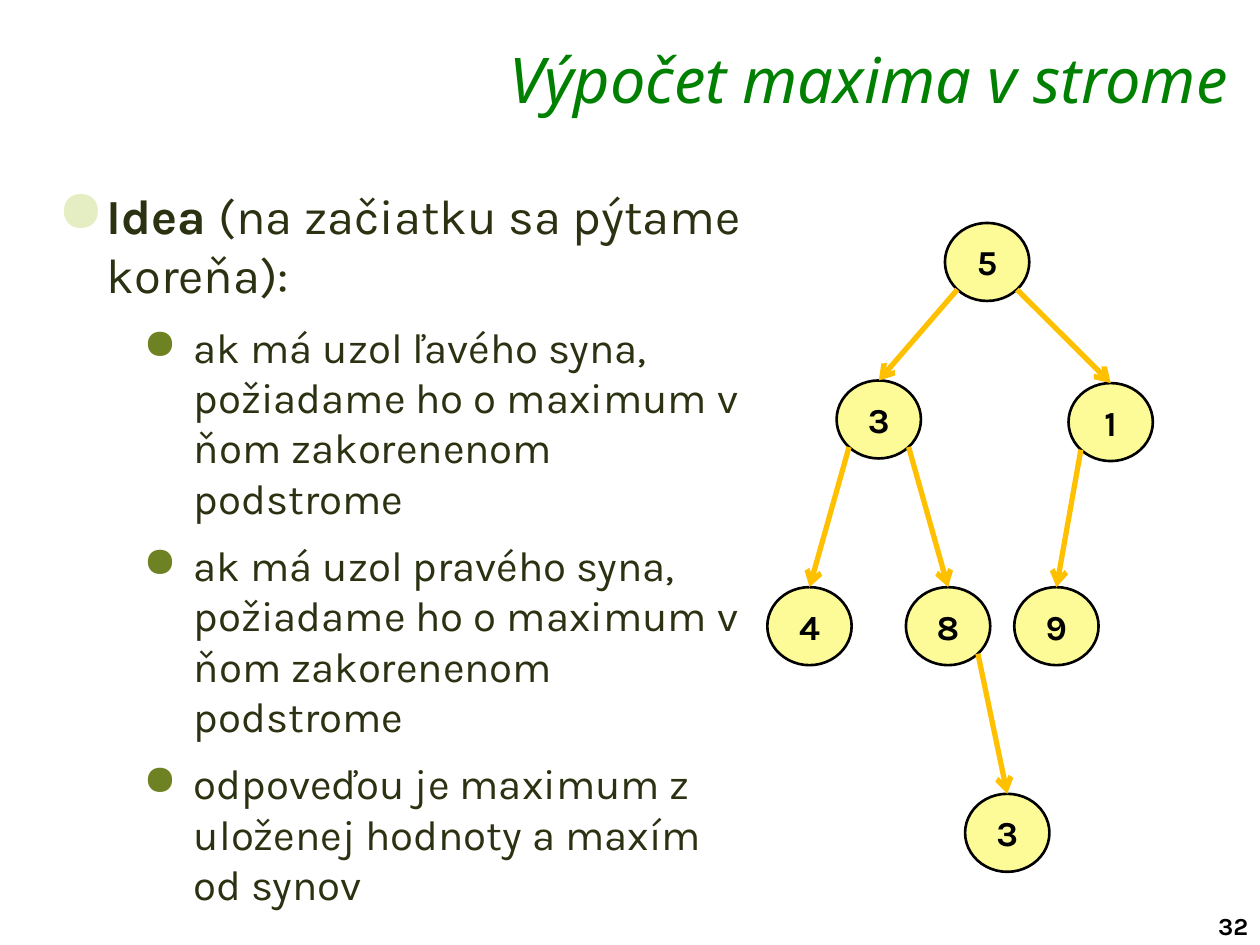
from dataclasses import dataclass

import pptx
from lxml import etree
from pptx import util as u
from pptx.dml.color import RGBColor
from pptx.enum import shapes, text
from pptx.oxml.ns import qn

BODY_FONT = "Karla"
NODE_WIDTH, NODE_HEIGHT = 48.2, 44.6
DIAGONAL = 0.5 ** 0.5  # cosine of 45 degrees


@dataclass(frozen=True)
class Node:
    label: str
    left: float
    top: float


@dataclass(frozen=True)
class Edge:
    child: str
    parent: str
    side: int  # -1 left child, 1 right child


@dataclass(frozen=True)
class Bullet:
    spans: tuple[tuple[str, bool], ...]
    level: int = 1
    size: float = 24
    indent: float = 77.8
    hanging: float = 28.8
    color: str = "6E8224"
    percent: int = 100


NODES = {
    "root": Node("5", 540, 127.4),
    "left": Node("3", 478.1, 217.4),
    "right": Node("1", 610.6, 218.9),
    "left_left": Node("4", 438.5, 335.5),
    "left_right": Node("8", 517.7, 335.5),
    "right_left": Node("9", 579.6, 335.5),
    "deepest": Node("3", 551.5, 453.6),
}
EDGES = (
    Edge("left_left", "left", -1),
    Edge("right_left", "right", -1),
    Edge("deepest", "left_right", 1),
    Edge("left", "root", -1),
    Edge("right", "root", 1),
    Edge("left_right", "left", 1),
)
SUBTREE = "ak má uzol {} syna, požiadame ho o maximum v ňom zakorenenom podstrome"
BULLETS = (
    Bullet((("Idea ", True), ("(na začiatku sa pýtame koreňa):", False)),
           level=0, size=28, indent=28.1, hanging=28.1, color="E5EEC2", percent=120),
    Bullet(((SUBTREE.format("ľavého"), False),)),
    Bullet(((SUBTREE.format("pravého"), False),)),
    Bullet((("odpoveďou je maximum z uloženej hodnoty a maxím od synov", False),)),
)


def apply(target, **values) -> None:
    for name, value in values.items():
        setattr(target, name, value)


def paint(color_format, value: str) -> None:
    color_format.rgb = RGBColor.from_string(value)


def add_span(para, words: str, color: str, **values) -> None:
    span = para.add_run()
    span.text = words
    apply(span.font, **values)
    paint(span.font.color, color)


def add_box(page, left: float, top: float, width: float, height: float, **values):
    box = page.shapes.add_textbox(u.Pt(left), u.Pt(top), u.Pt(width), u.Pt(height))
    apply(box.text_frame, **values)
    return box.text_frame


def add_bullet(para, bullet: Bullet) -> None:
    para.level = bullet.level
    props = para._p.get_or_add_pPr()
    props.set("marL", str(u.Pt(bullet.indent)))
    props.set("indent", str(-u.Pt(bullet.hanging)))
    color = etree.SubElement(props, qn("a:buClr"))
    etree.SubElement(color, qn("a:srgbClr"), val=bullet.color)
    etree.SubElement(props, qn("a:buSzPct"), val=str(bullet.percent * 1000))
    etree.SubElement(props, qn("a:buChar"), char="●")
    for words, bold in bullet.spans:
        add_span(para, words, "2B3212", name=BODY_FONT, size=u.Pt(bullet.size), bold=bold)


def add_node(page, node: Node):
    shape = page.shapes.add_shape(
        shapes.MSO_SHAPE.FLOWCHART_CONNECTOR, u.Pt(node.left), u.Pt(node.top),
        u.Pt(NODE_WIDTH), u.Pt(NODE_HEIGHT))
    shape.shadow.inherit = False
    shape.fill.solid()
    paint(shape.fill.fore_color, "FDFB97")
    paint(shape.line.color, "000000")
    shape.line.width = u.Pt(1.5)
    shape.text_frame.vertical_anchor = text.MSO_ANCHOR.MIDDLE
    para = shape.text_frame.paragraphs[0]
    para.alignment = text.PP_ALIGN.CENTER
    add_span(para, node.label, "000000", name=BODY_FONT, size=u.Pt(20), bold=True)
    return shape


def add_edge(page, edge: Edge, circles: dict) -> None:
    child, parent = NODES[edge.child], NODES[edge.parent]
    end_x = parent.left + NODE_WIDTH / 2 * (1 + edge.side * DIAGONAL)
    end_y = parent.top + NODE_HEIGHT / 2 * (1 + DIAGONAL)
    arrow = page.shapes.add_connector(
        shapes.MSO_CONNECTOR.STRAIGHT, u.Pt(child.left + NODE_WIDTH / 2),
        u.Pt(child.top), u.Pt(end_x), u.Pt(end_y))
    arrow.begin_connect(circles[edge.child], 0)
    paint(arrow.line.color, "FFC000")
    arrow.line.width = u.Pt(3)
    etree.SubElement(arrow.line._get_or_add_ln(), qn("a:headEnd"), type="arrow")
    etree.SubElement(arrow._element.spPr, qn("a:effectLst"))


def main() -> None:
    deck = pptx.Presentation()
    apply(deck, slide_width=u.Pt(720), slide_height=u.Pt(540))
    page = deck.slides.add_slide(deck.slide_layouts[6])

    # Page number
    number = add_box(page, 689, 517, 36.7, 23.8, word_wrap=False)
    add_span(number.paragraphs[0], "32", "000000",
             name=BODY_FONT, size=u.Pt(14), bold=True)

    # Title
    title = add_box(page, 164.9, 22.3, 543.6, 41.8, word_wrap=True, margin_top=u.Pt(1))
    title.paragraphs[0].alignment = text.PP_ALIGN.RIGHT
    add_span(title.paragraphs[0], "Výpočet maxima v strome", "008000",
             name="Noto Sans", size=u.Pt(36), italic=True)

    # Idea and its steps
    body = add_box(page, 25.9, 99.4, 407.5, 378, word_wrap=True, margin_top=u.Pt(6.4))
    for index, bullet in enumerate(BULLETS):
        para = body.add_paragraph() if index else body.paragraphs[0]
        add_bullet(para, bullet)
        gap = bullet.size * 0.2
        apply(para, space_before=u.Pt(gap if index else 0), space_after=u.Pt(gap))

    # Tree: nodes first, arrows on top
    circles = {key: add_node(page, node) for key, node in NODES.items()}
    for edge in EDGES:
        add_edge(page, edge, circles)

    deck.save("out.pptx")


if __name__ == "__main__":
    main()
